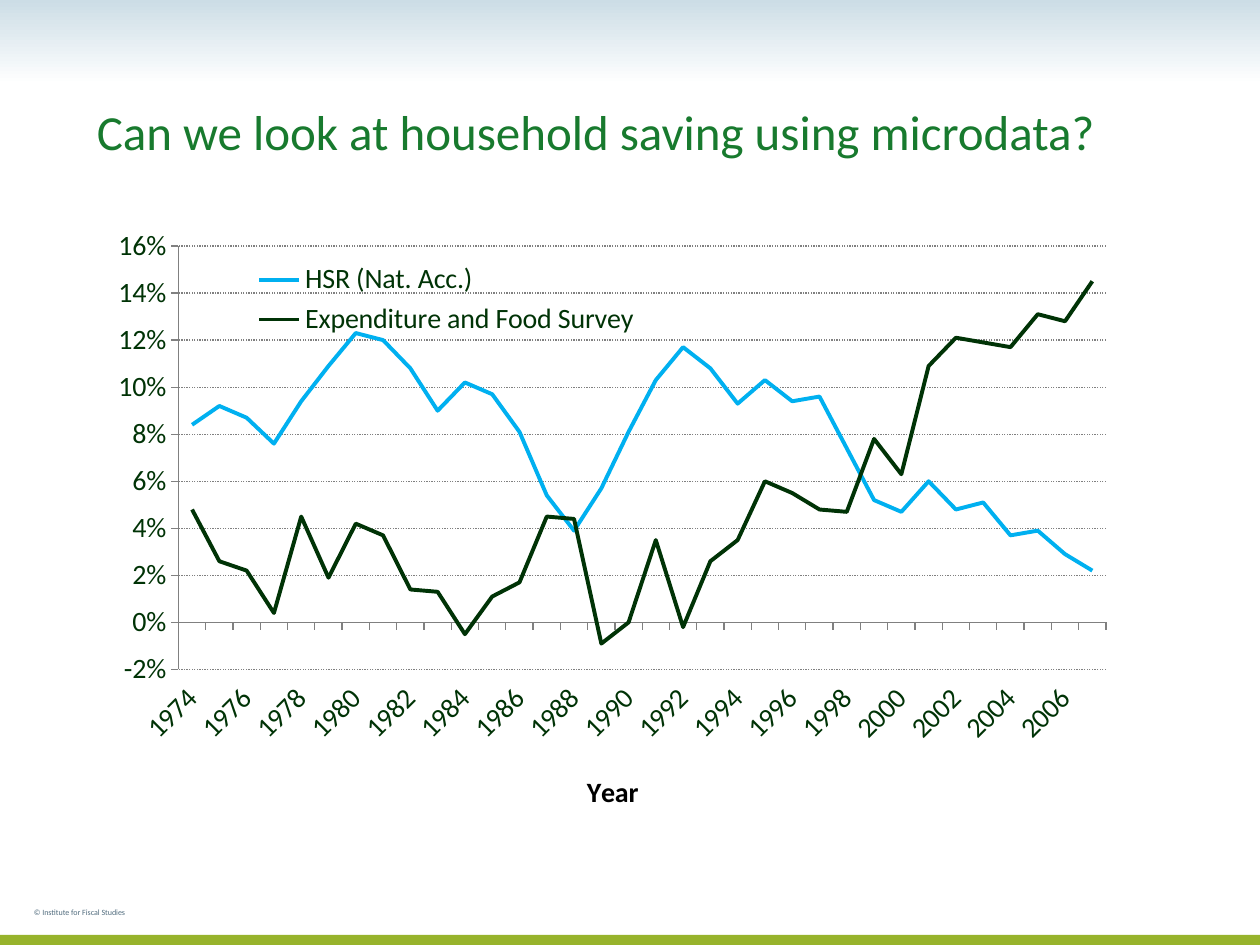
"""Build a slide comparing two measures of the household saving ratio over time."""
from dataclasses import dataclass

from lxml import etree
from pptx import Presentation
from pptx.chart.data import CategoryChartData
from pptx.dml.color import RGBColor
from pptx.enum.chart import XL_CHART_TYPE, XL_LEGEND_POSITION, XL_TICK_LABEL_POSITION, XL_TICK_MARK
from pptx.enum.dml import MSO_LINE
from pptx.enum.shapes import MSO_SHAPE
from pptx.enum.text import MSO_ANCHOR
from pptx.oxml.ns import qn
from pptx.util import Inches, Pt

RECTANGLE = MSO_SHAPE.RECTANGLE
BOTTOM = MSO_ANCHOR.BOTTOM
LINE_CHART = XL_CHART_TYPE.LINE
LEGEND_RIGHT = XL_LEGEND_POSITION.RIGHT
LABELS_LOW = XL_TICK_LABEL_POSITION.LOW
TICK_OUTSIDE = XL_TICK_MARK.OUTSIDE
DOTTED = MSO_LINE.ROUND_DOT


@dataclass(frozen=True)
class Theme:
    font: str = "Calibri"
    title: RGBColor = RGBColor(0x18, 0x7A, 0x2E)
    footer: RGBColor = RGBColor(0x52, 0x6D, 0x7F)
    sky: RGBColor = RGBColor(0xCC, 0xDD, 0xE6)
    white: RGBColor = RGBColor(0xFF, 0xFF, 0xFF)
    lime: RGBColor = RGBColor(0x97, 0xB3, 0x2C)
    dark: RGBColor = RGBColor(0x00, 0x33, 0x06)
    blue: RGBColor = RGBColor(0x00, 0xB0, 0xF0)
    black: RGBColor = RGBColor(0, 0, 0)
    grey: RGBColor = RGBColor(0x80, 0x80, 0x80)
    title_size: Pt = Pt(28)
    chart_size: Pt = Pt(16)
    footer_size: Pt = Pt(4.6)


THEME = Theme()


def add_text(slide, box, text, size, color, line_spacing):
    text_box = slide.shapes.add_textbox(*(Inches(length) for length in box))
    frame = text_box.text_frame
    frame.word_wrap = True
    frame.vertical_anchor = BOTTOM
    paragraph = frame.paragraphs[0]
    paragraph.line_spacing = line_spacing
    run = paragraph.add_run()
    run.text = text
    run.font.name = THEME.font
    run.font.size = size
    run.font.color.rgb = color


def set_layout(element, index, **settings):
    for old_layout in element.findall(qn("c:layout")):
        element.remove(old_layout)
    layout = etree.Element(qn("c:layout"))
    manual = etree.SubElement(layout, qn("c:manualLayout"))
    for tag, value in settings.items():
        etree.SubElement(manual, qn(f"c:{tag}")).set("val", str(value))
    element.insert(index, layout)


presentation = Presentation()
presentation.slide_width = Inches(10)
presentation.slide_height = Inches(7.5)
slide = presentation.slides.add_slide(presentation.slide_layouts[6])

header = slide.shapes.add_shape(RECTANGLE, 0, 0, Inches(10), Inches(0.67))
header.fill.gradient()
header.fill.gradient_angle = 270
for stop, color in zip(header.fill.gradient_stops, (THEME.sky, THEME.white)):
    stop.color.rgb = color

footer_bar = slide.shapes.add_shape(RECTANGLE, 0, Inches(7.42), Inches(10), Inches(0.08))
footer_bar.fill.solid()
footer_bar.fill.fore_color.rgb = THEME.lime
for band in (header, footer_bar):
    band.line.fill.background()
    band.shadow.inherit = False

add_text(slide, (0.67, 0.25, 8.58, 1.08), "Can we look at household saving using microdata?",
         THEME.title_size, THEME.title, 0.9)
add_text(slide, (0.17, 7.08, 2.75, 0.25), "© Institute for Fiscal Studies",
         THEME.footer_size, THEME.footer, 1.0)

series_values = {
    "HSR (Nat. Acc.)": (
        0.084, 0.092, 0.087, 0.076, 0.094, 0.109, 0.123, 0.12, 0.108, 0.09, 0.102, 0.097,
        0.081, 0.054, 0.039, 0.057, 0.081, 0.103, 0.117, 0.108, 0.093, 0.103, 0.094, 0.096,
        0.074, 0.052, 0.047, 0.06, 0.048, 0.051, 0.037, 0.039, 0.029, 0.022),
    "Expenditure and Food Survey": (
        0.048, 0.026, 0.022, 0.004, 0.045, 0.019, 0.042, 0.037, 0.014, 0.013, -0.005, 0.011,
        0.017, 0.045, 0.044, -0.009, 0, 0.035, -0.002, 0.026, 0.035, 0.06, 0.055, 0.048,
        0.047, 0.078, 0.063, 0.109, 0.121, 0.119, 0.117, 0.131, 0.128, 0.145),
}
chart_data = CategoryChartData(number_format="0%")
chart_data.categories = [str(year) for year in range(1974, 2008)]
for name, values in series_values.items():
    chart_data.add_series(name, values)

chart = slide.shapes.add_chart(LINE_CHART, Inches(0.67), Inches(1.75),
                               Inches(8.58), Inches(4.83), chart_data).chart
chart.has_title = False
chart.font.name = THEME.font
chart.font.size = THEME.chart_size
chart.font.color.rgb = THEME.dark

plot = chart.plots[0]
plot.vary_by_categories = False
for series, color in zip(plot.series, (THEME.blue, THEME.dark)):
    series.smooth = False
    series.format.line.width = Pt(2.25)
    series.format.line.color.rgb = color

year_axis = chart.category_axis
rate_axis = chart.value_axis
for axis in (year_axis, rate_axis):
    axis.major_tick_mark = TICK_OUTSIDE
    axis.format.line.color.rgb = THEME.grey
    axis.format.line.width = Pt(0.75)
    axis.tick_labels.font.size = THEME.chart_size

rate_axis.minimum_scale = -0.02
rate_axis.maximum_scale = 0.16
rate_axis.major_unit = 0.02
rate_axis.tick_labels.number_format = "0%"
rate_axis.tick_labels.number_format_is_linked = False
rate_axis.has_major_gridlines = True
gridline = rate_axis.major_gridlines.format.line
gridline.color.rgb = THEME.grey
gridline.width = Pt(0.75)
gridline.dash_style = DOTTED

year_axis.tick_label_position = LABELS_LOW
year_element = chart.element.find(".//" + qn("c:catAx"))
year_element.find(qn("c:txPr")).find(qn("a:bodyPr")).set("rot", "-2700000")
label_skip = etree.Element(qn("c:tickLblSkip"))
label_skip.set("val", "2")
year_element.find(qn("c:lblOffset")).addnext(label_skip)

run = year_axis.axis_title.text_frame.paragraphs[0].add_run()
run.text = "Year"
run.font.name = THEME.font
run.font.size = THEME.chart_size
run.font.bold = True
run.font.color.rgb = THEME.black

chart.has_legend = True
chart.legend.position = LEGEND_RIGHT
chart.legend.include_in_layout = False
chart.legend.font.size = THEME.chart_size
chart.legend.font.color.rgb = THEME.dark

set_layout(chart.element.find(".//" + qn("c:plotArea")), 0, layoutTarget="inner",
           xMode="edge", yMode="edge", x=0.087, y=0.042, w=0.858, h=0.696)
set_layout(year_element.find(qn("c:title")), 1, xMode="edge", yMode="edge", x=0.46, y=0.9)
set_layout(chart.element.find(".//" + qn("c:legend")), 1,
           xMode="edge", yMode="edge", x=0.15, y=0.06, w=0.37, h=0.14)

presentation.save("out.pptx")
